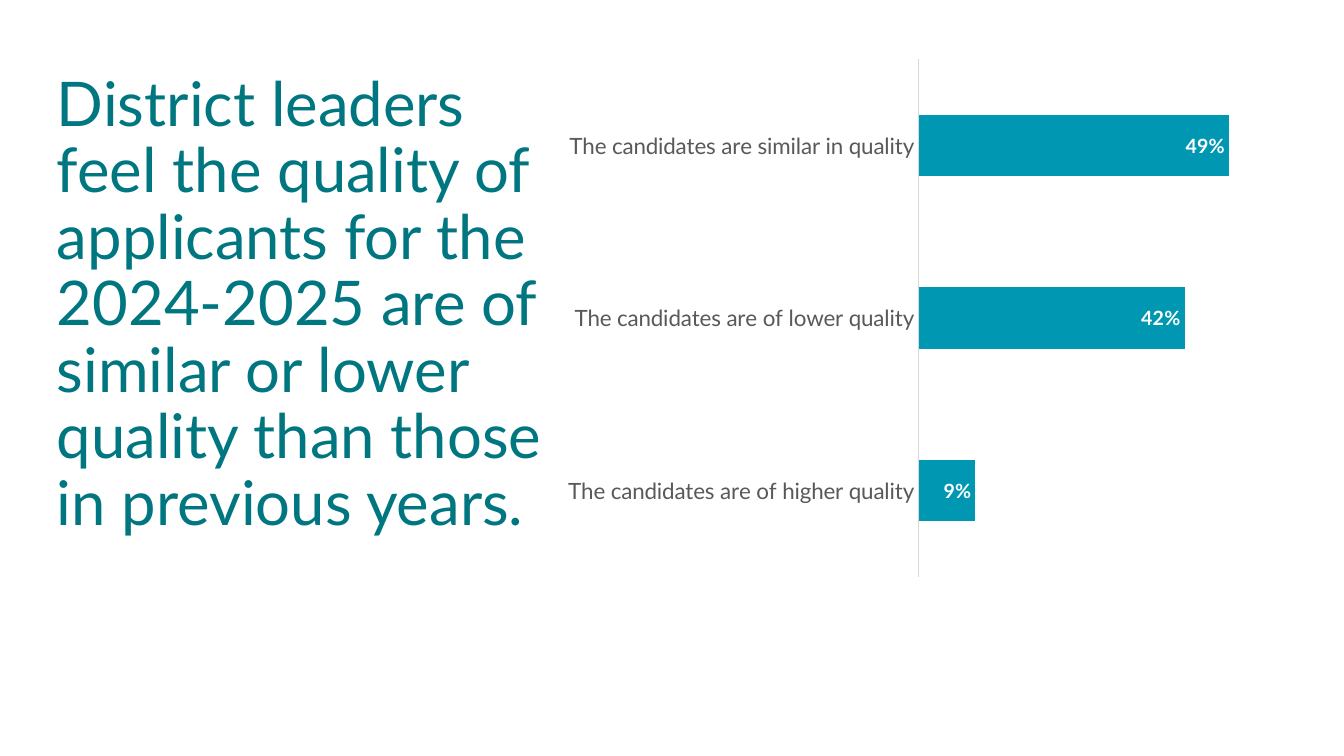
from dataclasses import dataclass

from pptx import Presentation
from pptx.chart.data import CategoryChartData
from pptx.dml.color import RGBColor
from pptx.enum.chart import XL_CHART_TYPE, XL_LABEL_POSITION, XL_TICK_MARK
from pptx.enum.text import MSO_ANCHOR
from pptx.util import Pt

BAR = XL_CHART_TYPE.BAR_CLUSTERED
INSIDE_END = XL_LABEL_POSITION.INSIDE_END
NO_TICK = XL_TICK_MARK.NONE
MIDDLE = MSO_ANCHOR.MIDDLE
EMU_PER_PX = 914400 / 100.8


@dataclass(frozen=True)
class Theme:
    """Colours, font and type sizes of the slide."""
    font: str = "Lato"
    title: str = "007780"
    bar: str = "0097B2"
    category: str = "595959"
    axis_line: str = "D9D9D9"
    label: str = "FFFFFF"
    text: str = "000000"
    title_size: int = 44
    category_size: int = 16
    label_size: int = 14
    chart_size: int = 10


def px(*lengths):
    """Turn pixel lengths into EMU."""
    return [round(length * EMU_PER_PX) for length in lengths]


def apply(target, values):
    """Set every attribute named in a dict."""
    for name, value in values.items():
        setattr(target, name, value)


class SlideBuilder:
    """Draws elements on the current slide in one theme."""

    def __init__(self, slide, theme):
        """Keep the slide and its theme."""
        self.slide = slide
        self.theme = theme

    def style_font(self, font, size, color, bold=False):
        """Format a font in the theme's typeface."""
        apply(font, {"name": self.theme.font, "size": Pt(size), "bold": bold})
        font.color.rgb = RGBColor.from_string(color)

    def title(self, text, box):
        """Add the wrapped headline."""
        frame = self.slide.shapes.add_textbox(*px(*box)).text_frame
        apply(frame, {"word_wrap": True, "vertical_anchor": MIDDLE})
        paragraph = frame.paragraphs[0]
        apply(paragraph, {"text": text, "line_spacing": 0.9})
        self.style_font(paragraph.runs[0].font, self.theme.title_size, self.theme.title)

    def bar_chart(self, shares, box):
        """Add a horizontal bar chart of percentage shares."""
        theme = self.theme
        data = CategoryChartData(number_format="0%")
        data.categories = list(shares)
        data.add_series("Series 1", list(shares.values()))
        chart = self.slide.shapes.add_chart(BAR, *px(*box), data).chart
        apply(chart, {"has_legend": False, "has_title": False})
        self.style_font(chart.font, theme.chart_size, theme.text)

        category_axis = chart.category_axis
        apply(category_axis, {"major_tick_mark": NO_TICK, "minor_tick_mark": NO_TICK,
                              "has_major_gridlines": False})
        self.style_font(category_axis.tick_labels.font, theme.category_size, theme.category)
        line = category_axis.format.line
        line.width = Pt(0.75)
        line.color.rgb = RGBColor.from_string(theme.axis_line)
        apply(chart.value_axis, {"visible": False, "has_major_gridlines": False,
                                 "minimum_scale": 0, "maximum_scale": 0.6})

        plot = chart.plots[0]
        apply(plot, {"gap_width": 182, "vary_by_categories": False})
        series = plot.series[0]
        series.invert_if_negative = False
        series.format.fill.solid()
        series.format.fill.fore_color.rgb = RGBColor.from_string(theme.bar)
        labels = series.data_labels
        apply(labels, {"show_value": True, "position": INSIDE_END,
                       "number_format": "0%", "number_format_is_linked": False})
        self.style_font(labels.font, theme.label_size, theme.label, bold=True)


def main():
    """Build and save the slide."""
    presentation = Presentation()
    width, height = px(1344, 756)
    apply(presentation, {"slide_width": width, "slide_height": height})
    slide = presentation.slides.add_slide(presentation.slide_layouts[6])
    builder = SlideBuilder(slide, Theme())
    builder.title(
        "District leaders feel the quality of applicants for the 2024-2025 "
        "are of similar or lower quality than those in previous years.",
        (47, 0, 513, 612),
    )
    builder.bar_chart(
        {
            "The candidates are of higher quality": 0.09,
            "The candidates are of lower quality": 0.42,
            "The candidates are similar in quality": 0.49,
        },
        (553, 48, 761, 540),
    )
    presentation.save("out.pptx")


if __name__ == "__main__":
    main()
